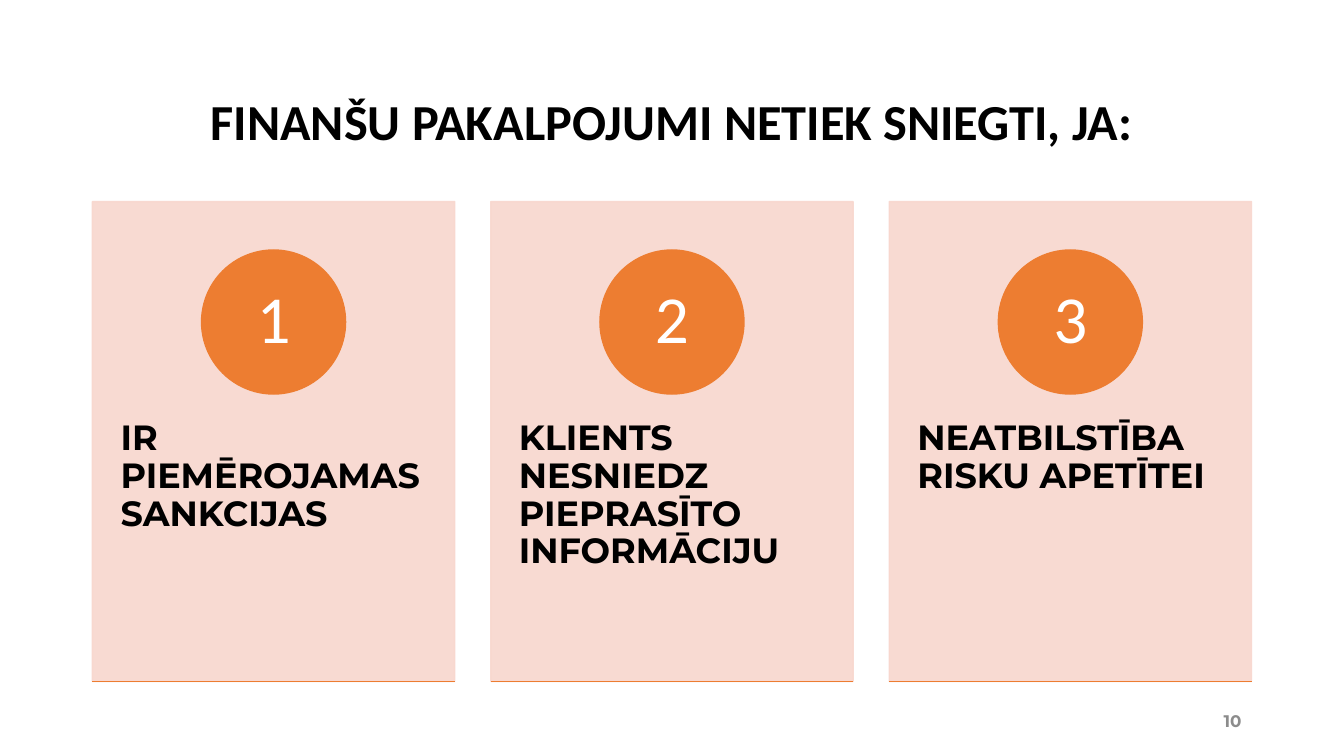
"""Build the slide listing when financial services are not provided."""
from dataclasses import dataclass

import pptx
import pptx.dml.color
import pptx.enum.shapes
import pptx.enum.text
import pptx.oxml
import pptx.oxml.ns
import pptx.util
from lxml import etree

Cm = pptx.util.Cm
ALIGN = pptx.enum.text.PP_ALIGN
ANCHOR = pptx.enum.text.MSO_ANCHOR
SHAPE = pptx.enum.shapes.MSO_SHAPE
ORANGE, PINK = "ED7D31", "F8D7CE"
LEFT, TOP, CARD_W, CARD_H, PITCH = 2.33, 5.08, 9.13, 12.09, 10.04
CIRCLE_TOP, CIRCLE_D = 6.3, 3.63
BODY_TOP, BODY_H = 9.68, 7.26


@dataclass
class Card:
    number: str
    reason: str


CARDS = [
    Card("1", "IR PIEMĒROJAMAS SANKCIJAS"),
    Card("2", "KLIENTS NESNIEDZ PIEPRASĪTO INFORMĀCIJU"),
    Card("3", "NEATBILSTĪBA RISKU APETĪTEI"),
]


def color(value: str) -> pptx.dml.color.RGBColor:
    return pptx.dml.color.RGBColor.from_string(value)


def write(sp, text: str, *, size: float, fill: str = "000000", font: str = "Montserrat",
          bold: bool = True, align=ALIGN.LEFT, anchor=ANCHOR.TOP, spacing: float = 0.9,
          pad_x: float = 0.25, pad_y: float = 0.13) -> None:
    tf = sp.text_frame
    tf.word_wrap = True
    tf.auto_size = pptx.enum.text.MSO_AUTO_SIZE.NONE
    tf.vertical_anchor = anchor
    tf.margin_left = tf.margin_right = Cm(pad_x)
    tf.margin_top = tf.margin_bottom = Cm(pad_y)
    p = tf.paragraphs[0]
    p.alignment, p.line_spacing = align, spacing
    r = p.add_run()
    r.text = text
    r.font.size, r.font.name, r.font.bold = pptx.util.Pt(size), font, bold
    r.font.color.rgb = color(fill)


def add_solid(slide, kind, x: float, y: float, w: float, h: float, fill: str,
              opacity: int = 100):
    sp = slide.shapes.add_shape(kind, Cm(x), Cm(y), Cm(w), Cm(h))
    sp.shadow.inherit = False
    sp.fill.solid()
    sp.fill.fore_color.rgb = color(fill)
    sp.line.color.rgb = color(fill)
    sp.line.width = pptx.util.Pt(1)
    if opacity < 100:
        qn = pptx.oxml.ns.qn
        for clr in sp.element.spPr.iter(qn("a:srgbClr")):
            etree.SubElement(clr, qn("a:alpha"), val=str(opacity * 1000))
    return sp


def add_rule(slide, x: float, y: float, w: float) -> None:
    line = slide.shapes.add_connector(
        pptx.enum.shapes.MSO_CONNECTOR.STRAIGHT, Cm(x), Cm(y), Cm(x + w), Cm(y))
    line.line.color.rgb = color(ORANGE)
    line.line.width = pptx.util.Pt(1)
    etree.SubElement(line.element.spPr, pptx.oxml.ns.qn("a:effectLst"))


def add_card(slide, card: Card, x: float) -> None:
    add_solid(slide, SHAPE.RECTANGLE, x, TOP, CARD_W, CARD_H, PINK, opacity=90)
    body = slide.shapes.add_textbox(Cm(x), Cm(BODY_TOP), Cm(CARD_W), Cm(BODY_H))
    write(body, card.reason, size=25, pad_x=0.71, pad_y=0.91)
    circle = add_solid(slide, SHAPE.OVAL, x + (CARD_W - CIRCLE_D) / 2, CIRCLE_TOP,
                       CIRCLE_D, CIRCLE_D, ORANGE)
    write(circle, card.number, size=48, fill="FFFFFF", font="Calibri", bold=False,
          align=ALIGN.CENTER, anchor=ANCHOR.MIDDLE, pad_x=0.28, pad_y=0.03)
    add_rule(slide, x, TOP + CARD_H, CARD_W)


def main() -> None:
    prs = pptx.Presentation()
    prs.slide_width, prs.slide_height = Cm(33.87), Cm(19.05)
    slide = prs.slides.add_slide(prs.slide_layouts[5])
    title = slide.shapes.title
    title.left, title.top, title.width, title.height = Cm(LEFT), Cm(1.55), Cm(29.21), Cm(3.15)
    write(title, "FINANŠU PAKALPOJUMI NETIEK SNIEGTI, JA:", size=36, font="Calibri",
          align=ALIGN.CENTER, anchor=ANCHOR.MIDDLE)
    number = slide.shapes.add_textbox(Cm(23.92), Cm(17.65), Cm(7.62), Cm(1.01))
    write(number, "10", size=12, fill="8C8C8C", align=ALIGN.RIGHT,
          anchor=ANCHOR.MIDDLE, spacing=1.0)
    number.text_frame.paragraphs[0].space_after = pptx.util.Pt(6)
    for i, card in enumerate(CARDS):
        add_card(slide, card, LEFT + i * PITCH)
    prs.save("out.pptx")


if __name__ == "__main__":
    main()
